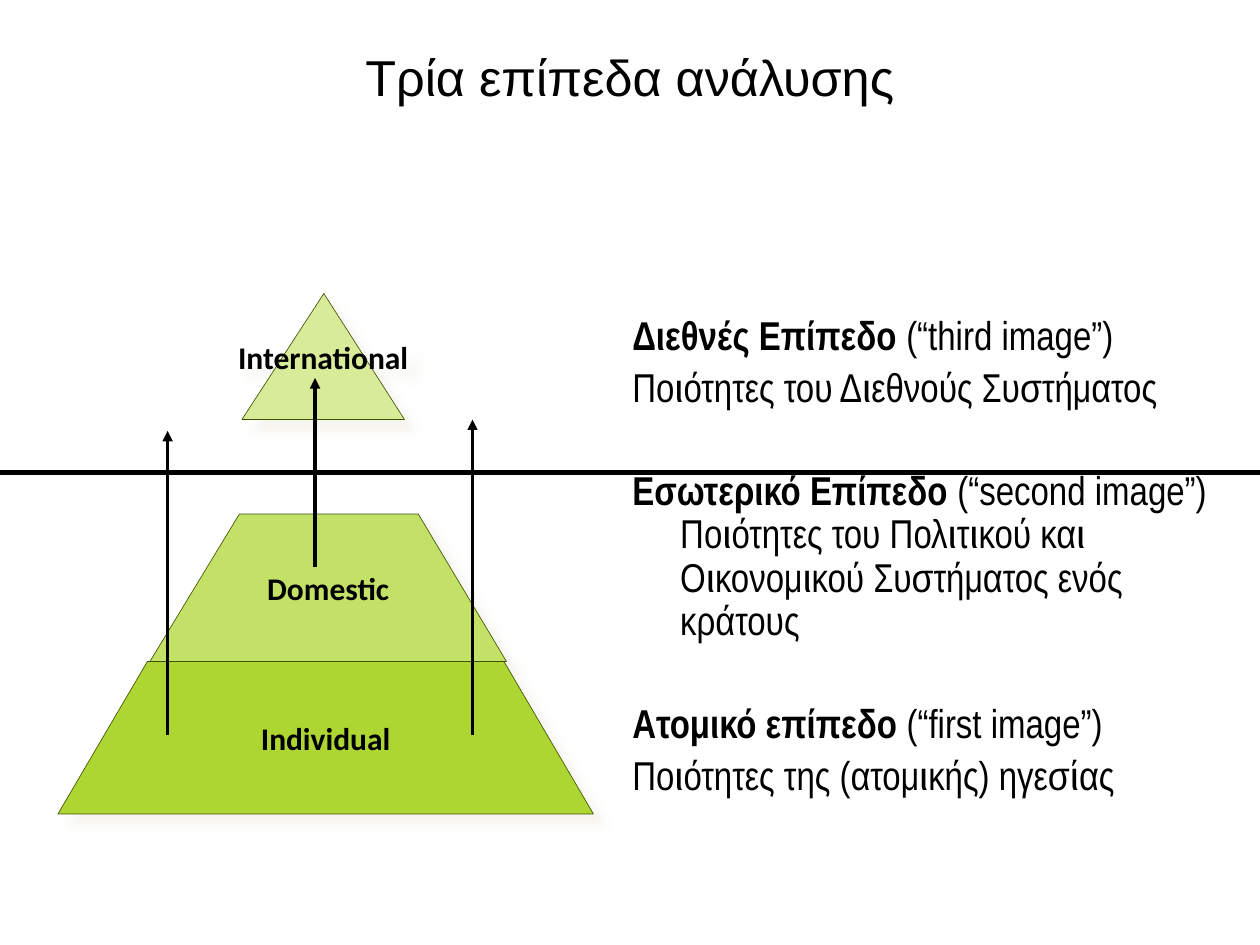
from lxml import etree
from pptx import Presentation
from pptx import util as u
from pptx.dml import color
from pptx.enum import shapes, text
from pptx.oxml import ns

WIDTH, HEIGHT = 10, 7.5

TIERS = [
    ("International", "D7EB99", 2.33, 3.33, (2.57, 2.57), (1.92, 3.21)),
    ("Domestic", "C2E166", 4.08, 5.25, (1.9, 3.32), (1.19, 4.02)),
    ("Individual", "ADD632", 5.25, 6.46, (1.17, 4), (0.46, 4.71)),
]
LEVELS = [
    ("Διεθνές Επίπεδο", " (“third image”)", "Ποιότητες του Διεθνούς Συστήματος"),
    ("Εσωτερικό Επίπεδο", " (“second image”) Ποιότητες του Πολιτικού και "
     "Οικονομικού Συστήματος ενός κράτους", None),
    ("Ατομικό επίπεδο", " (“first image”)", "Ποιότητες της (ατομικής) ηγεσίας"),
]
INFLUENCES = [(3.75, 5.83, 3.33, 1.75), (2.5, 4.5, 3, 2), (1.33, 5.83, 3.42, 2)]


def rgb(value):
    return color.RGBColor.from_string(value)


def style(font, name, size, bold=None):
    font.name, font.size, font.bold = name, u.Pt(size), bold
    font.color.rgb = rgb("000000")


def add_effect(parent, tag, **attributes):
    return etree.SubElement(parent, ns.qn(tag), attributes)


def place_title(slide, left, top, width, height):
    title = slide.shapes.title
    title.left, title.top = u.Inches(left), u.Inches(top)
    title.width, title.height = u.Inches(width), u.Inches(height)
    frame = title.text_frame
    frame.text = "Τρία επίπεδα ανάλυσης"
    frame.vertical_anchor = text.MSO_ANCHOR.MIDDLE
    heading = frame.paragraphs[0]
    heading.alignment = text.PP_ALIGN.CENTER
    style(heading.font, "Arial", 28.8)


def add_level_line(frame, parts, space_before):
    line = frame.paragraphs[0] if not frame.text else frame.add_paragraph()
    line.line_spacing, line.space_before = 0.9, u.Pt(space_before)
    properties = line._p.get_or_add_pPr()
    properties.set("marL", str(u.Inches(0.38)))
    properties.set("indent", str(-u.Inches(0.38)))
    style(line.font, "Arial Narrow", 23)
    for words, bold in parts:
        run = line.add_run()
        run.text = words
        run.font.bold = bold


def place_levels(slide, left, top, width, height):
    box = slide.shapes.add_textbox(*map(u.Inches, (left, top, width, height)))
    frame = box.text_frame
    frame.word_wrap = True
    for number, (level, image, qualities) in enumerate(LEVELS):
        add_level_line(frame, [(level, True), (image, False)], 34 if number else 0)
        if qualities:
            add_level_line(frame, [(qualities, False)], 4.6)


def add_tier(slide, label, fill, top, bottom, upper, lower):
    corners = [(lower[0], bottom), (upper[0], top), (upper[1], top), (lower[1], bottom)]
    points = [(u.Inches(x), u.Inches(y)) for x, y in corners]
    outline = slide.shapes.build_freeform(*points[0])
    outline.add_line_segments(points[1:], close=True)
    tier = outline.convert_to_shape()
    tier.fill.solid()
    tier.fill.fore_color.rgb = rgb(fill)
    tier.line.color.rgb = rgb("3D5100")
    tier.line.width = u.Pt(0.37)
    tier.shadow.inherit = False
    effects = tier._element.spPr.find(ns.qn("a:effectLst"))
    shadow = add_effect(effects, "a:outerShdw", blurRad=str(u.Pt(5)),
                        dist=str(u.Pt(8.5)), dir=str(45 * 60000))
    tint = add_effect(shadow, "a:srgbClr", val="EEECE1")
    add_effect(tint, "a:alpha", val="50000")
    frame = tier.text_frame
    frame.text = label
    frame.word_wrap = False
    frame.vertical_anchor = text.MSO_ANCHOR.MIDDLE
    name = frame.paragraphs[0]
    name.alignment = text.PP_ALIGN.CENTER
    style(name.font, "Calibri", 18, True)
    return tier


def place_pyramid(slide):
    slide.shapes.add_group_shape([add_tier(slide, *tier) for tier in TIERS])


def add_rule(slide, start, end, weight, arrow=False):
    rule = slide.shapes.add_connector(
        shapes.MSO_CONNECTOR.STRAIGHT, *map(u.Inches, start + end))
    rule.line.color.rgb = rgb("000000")
    rule.line.width = u.Pt(weight)
    if arrow:
        add_effect(rule.line._get_or_add_ln(), "a:tailEnd", type="triangle")
    add_effect(rule._element.spPr, "a:effectLst")


def place_influences(slide):
    add_rule(slide, (WIDTH, HEIGHT / 2), (0, HEIGHT / 2), 3)
    for x, start, end, weight in INFLUENCES:
        add_rule(slide, (x, start), (x, end), weight, arrow=True)


def main():
    deck = Presentation()
    deck.slide_width, deck.slide_height = u.Inches(WIDTH), u.Inches(HEIGHT)
    slide = deck.slides.add_slide(deck.slide_layouts[5])
    place_title(slide, 0.05 * WIDTH, 0.04 * HEIGHT, 0.9 * WIDTH, 0.61)
    place_levels(slide, 4.92, 2.46, 4.92, 4.71)
    place_pyramid(slide)
    place_influences(slide)
    deck.save("out.pptx")


if __name__ == "__main__":
    main()
